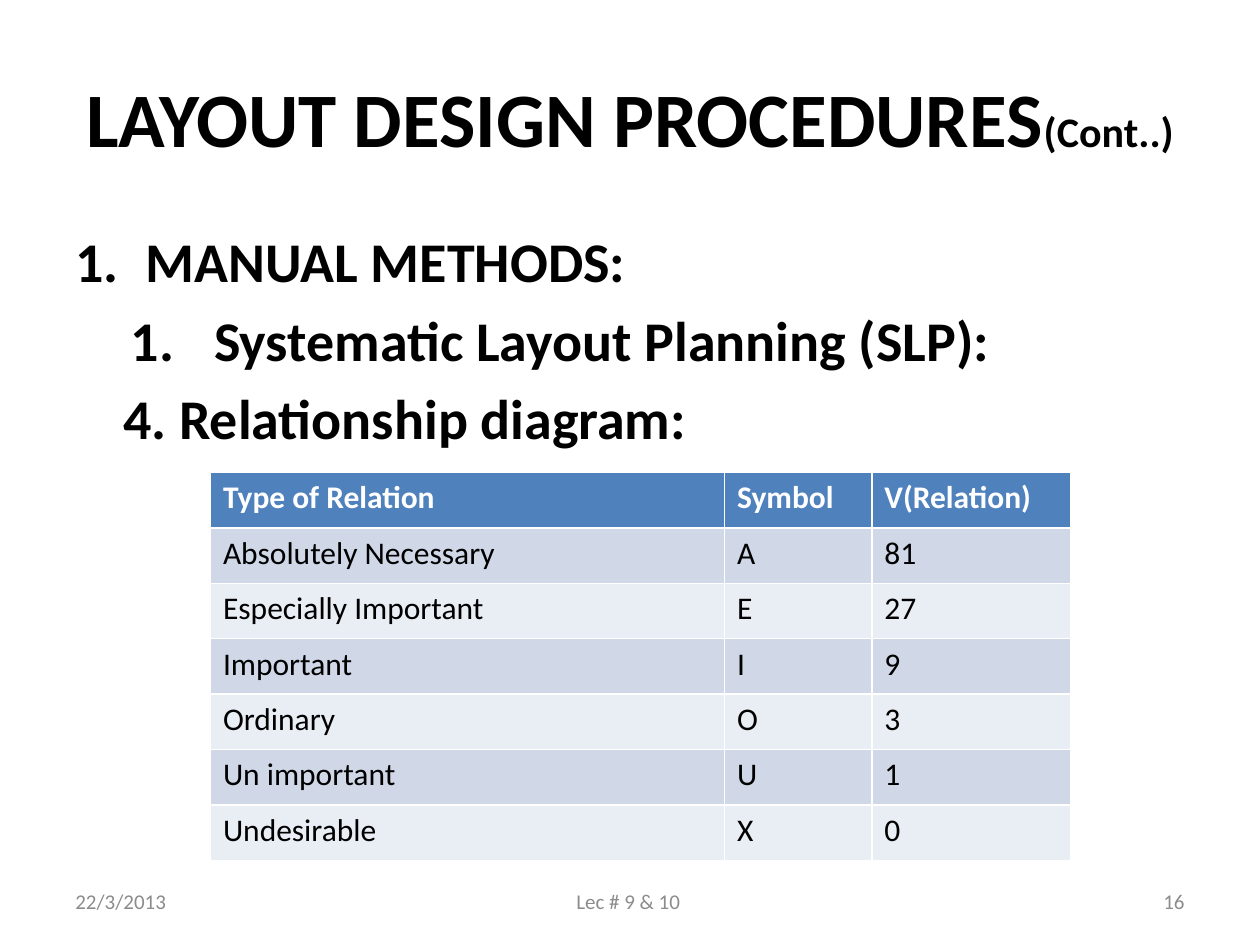
import dataclasses
import typing

import lxml.etree
import pptx
import pptx.dml.color
import pptx.enum.text
import pptx.oxml.ns
import pptx.util

Inches = pptx.util.Inches
Pt = pptx.util.Pt
RGBColor = pptx.dml.color.RGBColor
ALIGN = pptx.enum.text.PP_ALIGN
ANCHOR = pptx.enum.text.MSO_ANCHOR

FONT = "Calibri"
BLACK = RGBColor(0x00, 0x00, 0x00)
WHITE = RGBColor(0xFF, 0xFF, 0xFF)
GREY = RGBColor(0x8C, 0x8C, 0x8C)
BLUE = RGBColor(0x4F, 0x81, 0xBD)
BANDS = (RGBColor(0xE9, 0xED, 0xF4), RGBColor(0xD0, 0xD8, 0xE8))


@dataclasses.dataclass(frozen=True)
class Point:
    text: str
    margin: float
    hang: float = 0
    number: bool = False


@dataclasses.dataclass(frozen=True)
class Footer:
    text: str
    left: float
    width: float
    align: ALIGN


POINTS = (
    Point("MANUAL METHODS:", 0.56, 0.56, True),
    Point(" Systematic Layout Planning (SLP):", 1, 0.56, True),
    Point("4. Relationship diagram:", 0.38),
)
FOOTERS = (
    Footer("22/3/2013", 0.5, 2.33, ALIGN.LEFT),
    Footer("Lec # 9 & 10 ", 3.42, 3.17, ALIGN.CENTER),
    Footer("16", 7.17, 2.33, ALIGN.RIGHT),
)
ROWS = (
    ("Type of Relation", "Symbol", "V(Relation)"),
    ("Absolutely Necessary", "A", "81"),
    ("Especially Important", "E", "27"),
    ("Important", "I", "9"),
    ("Ordinary", "O", "3"),
    ("Un important", "U", "1"),
    ("Undesirable", "X", "0"),
)
COLS = (4.08, 1.17, 1.58)
HEIGHT = 0.44


def style(run: typing.Any, size: float, color: RGBColor, bold: bool = False) -> None:
    run.font.name = FONT
    run.font.size = Pt(size)
    run.font.bold = bold
    run.font.color.rgb = color


def add_box(slide: typing.Any, left: float, top: float, width: float,
            height: float, anchor: ANCHOR) -> typing.Any:
    box = slide.shapes.add_textbox(
        Inches(left), Inches(top), Inches(width), Inches(height))
    frame = box.text_frame
    frame.word_wrap = True
    frame.vertical_anchor = anchor
    return frame


def add_title(slide: typing.Any) -> None:
    frame = add_box(slide, 0.5, 0.3, 9, 1.25, ANCHOR.MIDDLE)
    frame.text = "LAYOUT DESIGN PROCEDURES"
    para = frame.paragraphs[0]
    para.alignment = ALIGN.CENTER
    para.add_run().text = "(Cont..)"
    for run, size in zip(para.runs, (44, 24)):
        style(run, size, BLACK, True)


def indent(para: typing.Any, point: Point) -> None:
    props = para._p.get_or_add_pPr()
    props.set("marL", str(Inches(point.margin)))
    props.set("indent", str(-Inches(point.hang)))
    if point.number:
        font = lxml.etree.SubElement(props, pptx.oxml.ns.qn("a:buFont"))
        font.set("typeface", "+mj-lt")
        mark = lxml.etree.SubElement(props, pptx.oxml.ns.qn("a:buAutoNum"))
        mark.set("type", "arabicPeriod")


def add_body(slide: typing.Any) -> None:
    frame = add_box(slide, 0.5, 1.75, 9, 5.42, ANCHOR.TOP)
    frame.text = "\n".join(point.text for point in POINTS)
    for level, (para, point) in enumerate(zip(frame.paragraphs, POINTS)):
        para.level = level % 2
        para.space_before = Pt(6.4)
        indent(para, point)
        style(para.runs[0], 32, BLACK, True)


def add_grid(slide: typing.Any) -> None:
    table = slide.shapes.add_table(
        len(ROWS), len(COLS), Inches(1.67), Inches(3.75),
        Inches(sum(COLS)), Inches(HEIGHT * len(ROWS))).table
    for col, width in zip(table.columns, COLS):
        col.width = Inches(width)
    for i, texts in enumerate(ROWS):
        table.rows[i].height = Inches(HEIGHT)
        head = i == 0
        for j, text in enumerate(texts):
            cell = table.cell(i, j)
            cell.text_frame.text = text
            cell.fill.solid()
            cell.fill.fore_color.rgb = BLUE if head else BANDS[i % 2]
            run = cell.text_frame.paragraphs[0].runs[0]
            style(run, 18, WHITE if head else BLACK, head)


def add_footer(slide: typing.Any, item: Footer) -> None:
    frame = add_box(slide, item.left, 6.95, item.width, 0.4, ANCHOR.MIDDLE)
    frame.text = item.text
    para = frame.paragraphs[0]
    para.alignment = item.align
    style(para.runs[0], 12, GREY)


def main() -> None:
    """Build the relationship diagram slide."""
    deck = pptx.Presentation()
    deck.slide_width = Inches(10)
    deck.slide_height = Inches(7.5)
    slide = deck.slides.add_slide(deck.slide_layouts[6])
    add_title(slide)
    add_body(slide)
    add_grid(slide)
    for item in FOOTERS:
        add_footer(slide, item)
    deck.save("out.pptx")


if __name__ == "__main__":
    main()
